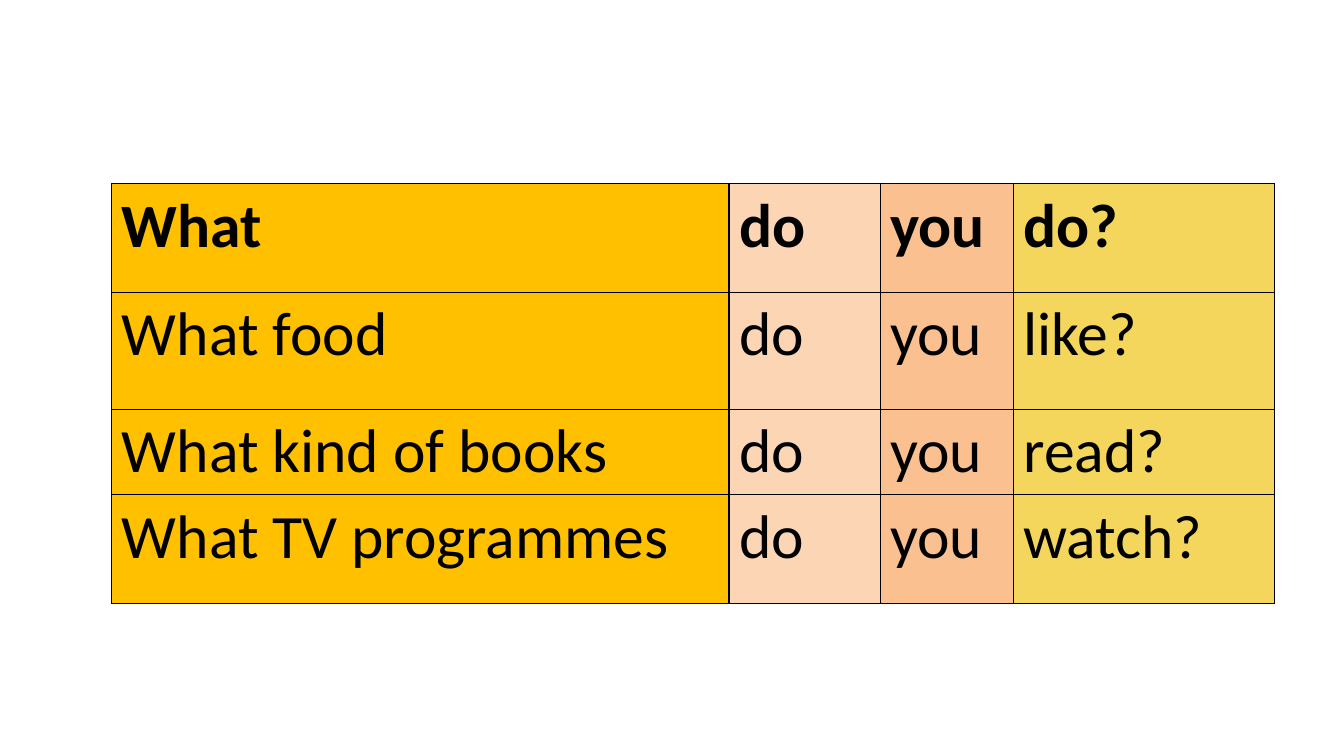
from lxml import etree
from pptx import Presentation
from pptx.dml.color import RGBColor
from pptx.oxml.ns import qn
from pptx.util import Inches, Pt

COLORS = {
    "ink": "000000",
    "what": "FFC000",
    "do": "FCD5B5",
    "you": "FAC090",
    "verb": "F3D65B",
}
# Each column: fill name and width in inches
COLUMNS = [("what", 6.12), ("do", 1.5), ("you", 1.32), ("verb", 2.59)]
HEIGHTS = [1.08, 1.16, 0.84, 1.08]
QUESTIONS = [
    ("What", "do?"),
    ("What food", "like?"),
    ("What kind of books", "read?"),
    ("What TV programmes", "watch?"),
]


def color(name):
    return RGBColor.from_string(COLORS[name])


def add_border(cell):
    props = cell._tc.get_or_add_tcPr()
    for side in ("a:lnL", "a:lnR", "a:lnT", "a:lnB"):
        line = etree.SubElement(props, qn(side), w=str(Pt(1)))
        fill = etree.SubElement(line, qn("a:solidFill"))
        etree.SubElement(fill, qn("a:srgbClr"), val=COLORS["ink"])


def fill_cell(cell, text, shade, bold):
    add_border(cell)
    cell.fill.solid()
    cell.fill.fore_color.rgb = color(shade)
    cell.text = text
    font = cell.text_frame.paragraphs[0].font
    font.name = "Calibri"
    font.size = Pt(44)
    font.bold = bold
    font.color.rgb = color("ink")


def add_grid(slide):
    width = sum(size for _, size in COLUMNS)
    frame = slide.shapes.add_table(
        len(QUESTIONS), len(COLUMNS),
        Inches(1.11), Inches(1.82), Inches(width), Inches(sum(HEIGHTS)))
    table = frame.table
    for column, (_, size) in zip(table.columns, COLUMNS):
        column.width = Inches(size)
    for row, height in zip(table.rows, HEIGHTS):
        row.height = Inches(height)
    for r, (topic, verb) in enumerate(QUESTIONS):
        words = (topic, "do", "you", verb)
        for c, (text, (shade, _)) in enumerate(zip(words, COLUMNS)):
            fill_cell(table.cell(r, c), text, shade, bold=r == 0)


def main():
    deck = Presentation()
    deck.slide_width = Inches(13.33)
    deck.slide_height = Inches(7.5)
    slide = deck.slides.add_slide(deck.slide_layouts[6])
    add_grid(slide)
    deck.save("out.pptx")


if __name__ == "__main__":
    main()
